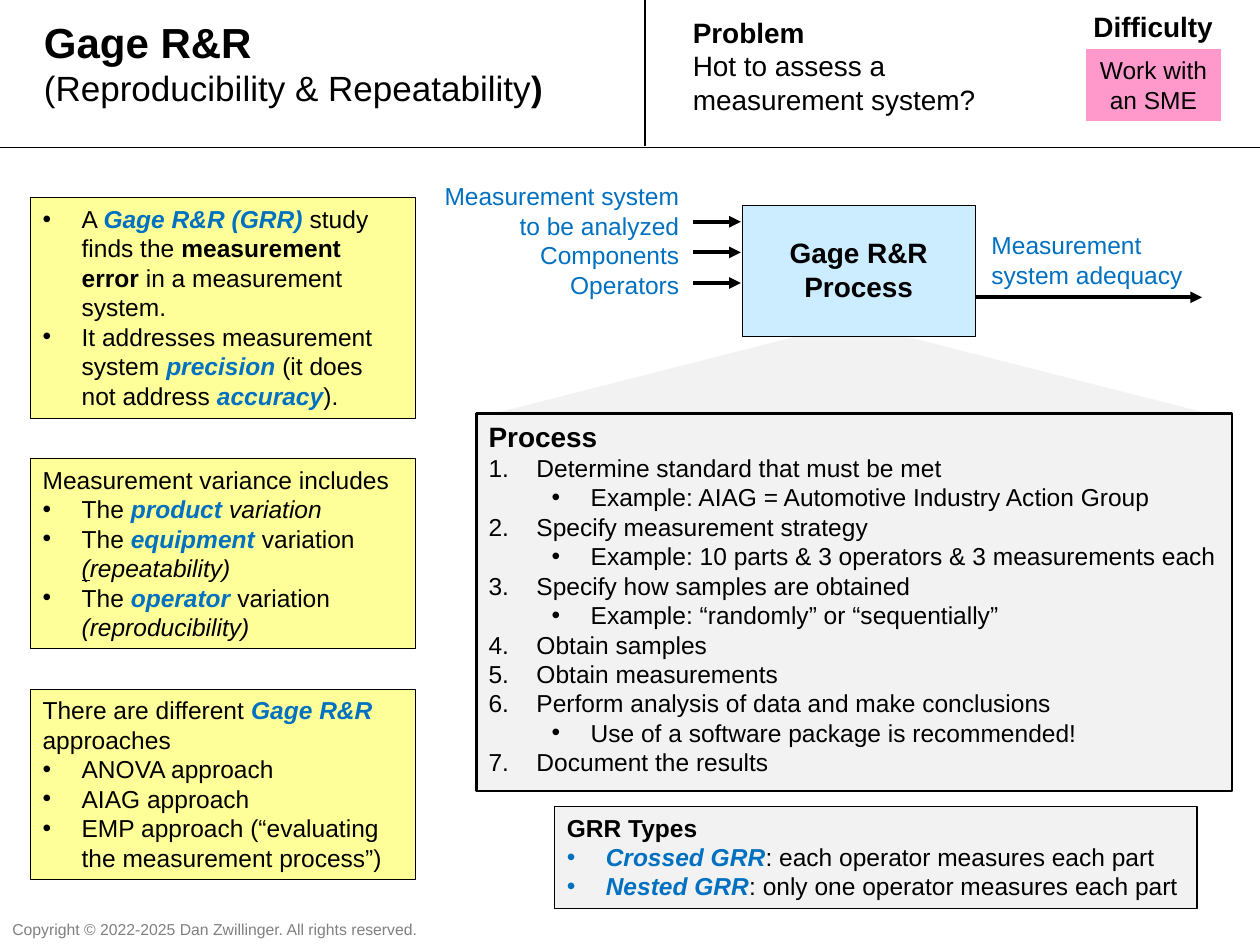
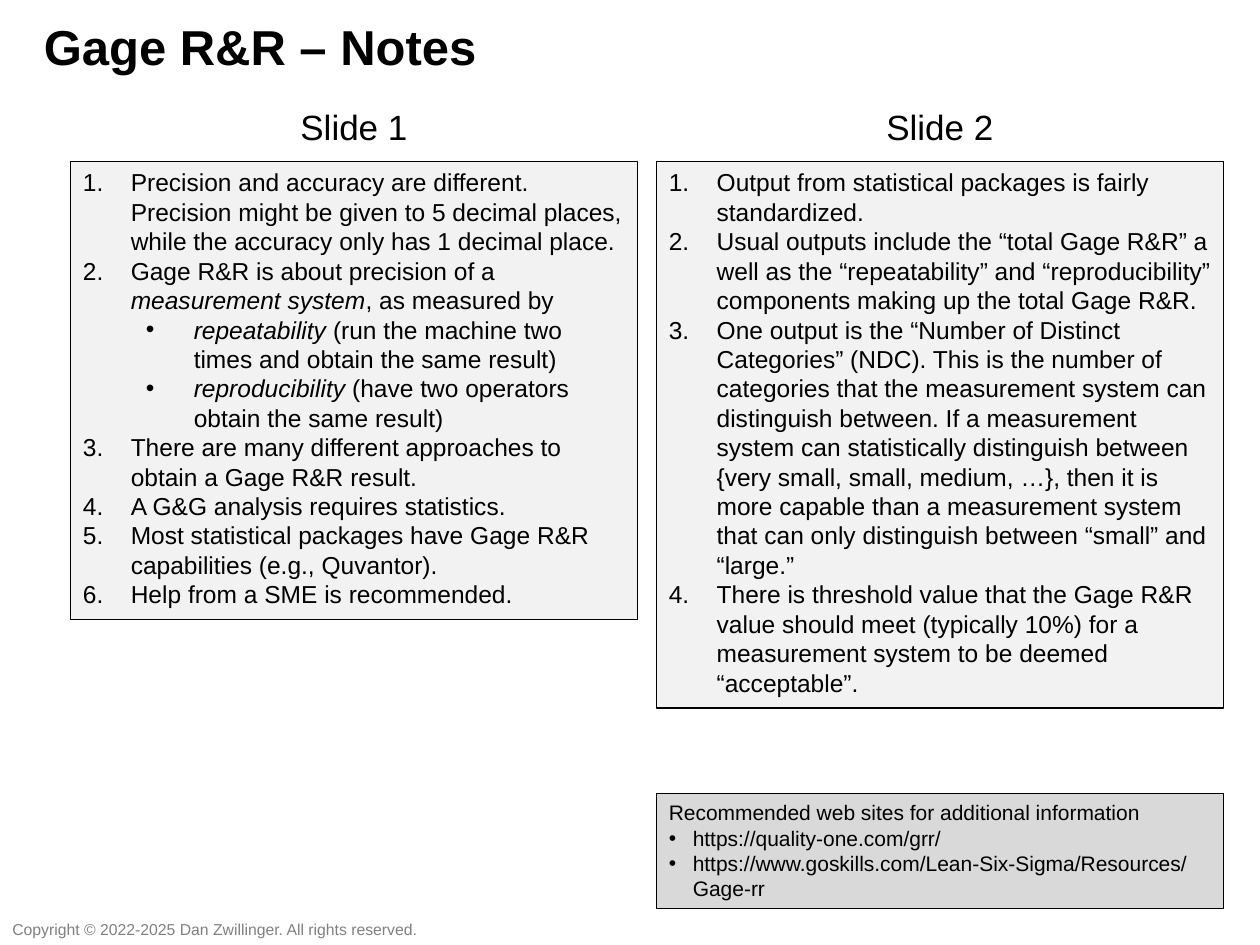
from lxml.etree import SubElement
from pptx import Presentation
from pptx.dml.color import RGBColor
from pptx.enum.shapes import MSO_CONNECTOR, MSO_SHAPE
from pptx.enum.text import MSO_ANCHOR, PP_ALIGN
from pptx.oxml.ns import qn
from pptx.util import Inches, Pt

COLORS = {
    "ink": "000000", "key": "0070C0", "footer": "808080",
    "yellow": "FFFF99", "sky": "CCECFF", "pink": "FF99CC",
    "light": "F2F2F2", "gray": "D9D9D9",
}
FONT = "Arial"
CELL = Inches(0.1)  # the slide is a grid of 100 columns by 75 rows
COLUMNS, ROWS = 100, 75
NUMBER_HANG = 0.38
LEFT, CENTER, RIGHT = PP_ALIGN.LEFT, PP_ALIGN.CENTER, PP_ALIGN.RIGHT


def add_text(slide, cells, paragraphs, size=14, head=None, color="ink", fill=None,
             border=0.75, align=LEFT, hang=0.31, wrap=True, top=0.05):
    """Paragraphs are (kind, text); |*key|, |!bold|, |/italic| and |_underlined| mark runs."""
    place = [round(cell * CELL) for cell in cells]
    if fill:
        box = slide.shapes.add_shape(MSO_SHAPE.RECTANGLE, *place)
        box.shadow.inherit = False
        box.fill.solid()
        box.fill.fore_color.rgb = RGBColor.from_string(COLORS[fill])
        if border:
            box.line.color.rgb = RGBColor.from_string(COLORS["ink"])
            box.line.width = Pt(border)
        else:
            box.line.fill.background()
    else:
        box = slide.shapes.add_textbox(*place)
    frame = box.text_frame
    frame.word_wrap = wrap
    frame.vertical_anchor = MSO_ANCHOR.TOP
    frame.margin_top = Inches(top)

    for index, (kind, text) in enumerate(paragraphs):
        paragraph = frame.add_paragraph() if index else frame.paragraphs[0]
        paragraph.alignment = align
        if kind in ("number", "bullet", "sub"):
            indent = NUMBER_HANG if kind == "number" else hang
            paragraph.level = 1 if kind == "sub" else 0
            props = paragraph._p.get_or_add_pPr()
            props.set("marL", str(Inches(indent + 0.5 * paragraph.level)))
            props.set("indent", str(-Inches(indent)))
            SubElement(props, qn("a:buFont"), typeface=FONT)
            if kind == "number":
                SubElement(props, qn("a:buAutoNum"), type="arabicPeriod")
            else:
                SubElement(props, qn("a:buChar"), char="•")
        paragraph.font.name = FONT
        paragraph.font.size = Pt(head if kind == "head" and head else size)
        paragraph.font.bold = kind == "head"
        paragraph.font.color.rgb = RGBColor.from_string(COLORS[color])
        for position, piece in enumerate(text.split("|")):
            if not piece:
                continue
            run = paragraph.add_run()
            mark = piece[0] if position % 2 else ""
            run.text = piece[len(mark):]
            if mark == "*":
                run.font.color.rgb = RGBColor.from_string(COLORS["key"])
            if mark in ("*", "!") and mark:
                run.font.bold = True
            if mark in ("*", "/", "_") and mark:
                run.font.italic = True
            if mark == "_":
                run.font.underline = True


def add_line(slide, start, end, width=0.75, arrow=False):
    ends = [round(cell * CELL) for cell in (*start, *end)]
    line = slide.shapes.add_connector(MSO_CONNECTOR.STRAIGHT, *ends)
    line.line.color.rgb = RGBColor.from_string(COLORS["ink"])
    line.line.width = Pt(width)
    if arrow:
        SubElement(line.line._get_or_add_ln(), qn("a:tailEnd"), type="triangle")
    SubElement(line._element.spPr, qn("a:effectLst"))


prs = Presentation()
prs.slide_width, prs.slide_height = COLUMNS * CELL, ROWS * CELL
overview, notes = [prs.slides.add_slide(prs.slide_layouts[6]) for _ in range(2)]

# Shared footer
for slide in (overview, notes):
    add_text(slide, (0, 72.5, 34.6, 2.5),
             [("plain", "Copyright © 2022-2025 Dan Zwillinger. All rights reserved.")],
             size=9, color="footer", wrap=False)

# Overview: header band
add_line(overview, (0, 11.7), (COLUMNS, 11.7))
add_line(overview, (51.2, 11.6), (51.2, 0))
add_text(overview, (2.5, 0.8, 45.8, 8.4),
         [("head", "Gage R&R"), ("plain", "(Reproducibility & Repeatability|!)|")],
         size=20, head=24)
add_text(overview, (54, 0.7, 25.1, 9.1),
         [("head", "Problem"), ("plain", "Hot to assess a measurement system?")], size=16)
add_text(overview, (85.8, 0.3, 11.5, 3.7), [("head", "Difficulty")], size=16, wrap=False)
add_text(overview, (86.2, 3.9, 10.7, 5.7), [("plain", "Work with an SME")],
         fill="pink", border=0, align=CENTER)

# Overview: yellow fact boxes, stacked with equal gaps
facts = [
    (17.5, [
        ("bullet", "A |*Gage R&R (GRR) |study finds the |!measurement error |"
                   "in a measurement system."),
        ("bullet", "It addresses measurement system |*precision| "
                   "(it does not address |*accuracy|)."),
    ]),
    (15.1, [
        ("plain", "Measurement variance includes"),
        ("bullet", "The |*product ||/variation|"),
        ("bullet", "The |*equipment |variation |_(||/repeatability)|"),
        ("bullet", "The |*operator |variation |/(reproducibility)|"),
    ]),
    (15.1, [
        ("plain", "There are different |*Gage R&R |approaches"),
        ("bullet", "ANOVA approach"),
        ("bullet", "AIAG approach"),
        ("bullet", "EMP approach (“evaluating the measurement process”)"),
    ]),
]
fact_top, fact_gap = 15.7, 3.2
for height, fact in facts:
    add_text(overview, (2.4, fact_top, 30.6, height), fact, fill="yellow")
    fact_top += height + fact_gap

# Overview: zoom from the process box down to its steps
zoom = overview.shapes.add_shape(
    MSO_SHAPE.ISOSCELES_TRIANGLE,
    *[round(cell * CELL) for cell in (38.1, 25.6, 58.9, 7.5)])
zoom.shadow.inherit = False
zoom.fill.solid()
zoom.fill.fore_color.rgb = RGBColor.from_string(COLORS["light"])
zoom.line.fill.background()

# Overview: inputs, process and output
add_text(overview, (33.1, 13.9, 21.8, 10.4),
         [("plain", "Measurement system to be analyzed"),
          ("plain", "Components"), ("plain", "Operators")],
         color="key", align=RIGHT)
add_text(overview, (58.9, 16.3, 18.5, 10.4), [("head", "Gage R&R"), ("head", "Process")],
         size=16, fill="sky", align=CENTER, top=0.24)
add_text(overview, (77.7, 17.8, 17.9, 5.7), [("plain", "Measurement system adequacy")],
         color="key")
for number in range(3):
    row = 17.6 + 2.43 * number
    add_line(overview, (55, row), (58.8, row), 2.25, arrow=True)
add_line(overview, (77.4, 23.6), (95.4, 23.6), 2.25, arrow=True)

# Overview: steps and types
add_text(overview, (37.8, 32.8, 60, 30), [
    ("head", "Process"),
    ("number", "Determine standard that must be met"),
    ("sub", "Example: AIAG = Automotive Industry Action Group"),
    ("number", "Specify measurement strategy"),
    ("sub", "Example: 10 parts & 3 operators & 3 measurements each"),
    ("number", "Specify how samples are obtained"),
    ("sub", "Example: “randomly” or “sequentially”"),
    ("number", "Obtain samples"),
    ("number", "Obtain measurements"),
    ("number", "Perform analysis of data and make conclusions"),
    ("sub", "Use of a software package is recommended!"),
    ("number", "Document the results"),
], head=16, fill="light", border=1.5)
add_text(overview, (44, 64, 51, 8.1), [
    ("head", "GRR Types"),
    ("bullet", "|*Crossed GRR|: each operator measures each part"),
    ("bullet", "|*Nested GRR|: only one operator measures each part"),
], fill="light")

# Notes: title and one column per slide
add_text(notes, (2.5, 0.8, 78.8, 5.7), [("head", "Gage R&R – Notes")], size=28)
note_columns = [
    ("Slide 1", 5.6, 36.4, [
        ("number", "Precision and accuracy are different. Precision might be given to "
                   "5 decimal places, while the accuracy only has 1 decimal place."),
        ("number", "Gage R&R is about precision of a |/measurement system|, as measured by"),
        ("sub", "|/repeatability| (run the machine two times and obtain the same result)"),
        ("sub", "|/reproducibility| (have two operators obtain the same result)"),
        ("number", "There are many different approaches to obtain a Gage R&R result."),
        ("number", "A G&G analysis requires statistics."),
        ("number", "Most statistical packages have Gage R&R capabilities (e.g., Quvantor)."),
        ("number", "Help from a SME is recommended."),
    ]),
    ("Slide 2", 52.1, 43.4, [
        ("number", "Output from statistical packages is fairly standardized."),
        ("number", "Usual outputs include the “total Gage R&R” a well as the “repeatability” "
                   "and “reproducibility” components making up the total Gage R&R."),
        ("number", "One output is the “Number of Distinct Categories” (NDC). This is the "
                   "number of categories that the measurement system can distinguish "
                   "between. If a measurement system can statistically distinguish between "
                   "{very small, small, medium, …}, then it is more capable than a "
                   "measurement system that can only distinguish between “small” and "
                   "“large.”"),
        ("number", "There is threshold value that the Gage R&R value should meet "
                   "(typically 10%) for a measurement system to be deemed “acceptable”."),
    ]),
]
for heading, left, height, points in note_columns:
    add_text(notes, (left, 7.9, 45, 4.4), [("plain", heading)], size=20, align=CENTER)
    add_text(notes, (left, 12.8, 45, height), points, fill="light", hang=NUMBER_HANG)

# Notes: web sites
add_text(notes, (52.1, 63, 45, 9.1), [
    ("plain", "Recommended web sites for additional information"),
    ("bullet", "https://quality-one.com/grr/"),
    ("bullet", "https://www.goskills.com/Lean-Six-Sigma/Resources/Gage-rr"),
], size=12, fill="gray", hang=0.19)

prs.save("out.pptx")
